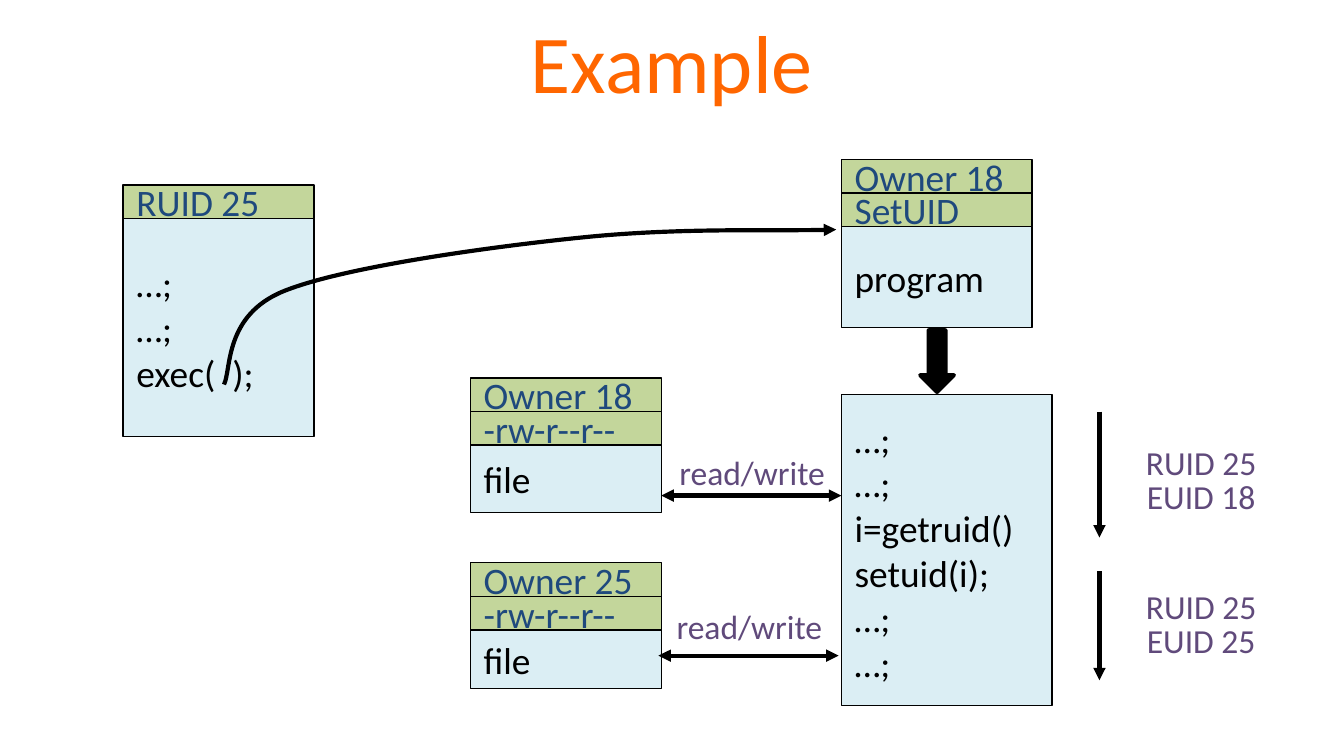
"""Build a slide that shows how setuid changes the user IDs of a process."""
from lxml.etree import SubElement
from pptx import Presentation
from pptx.dml.color import RGBColor
from pptx.enum.shapes import MSO_CONNECTOR as CONN, MSO_SHAPE as SHAPE
from pptx.enum.text import MSO_ANCHOR as ANCHOR, PP_ALIGN as ALIGN
from pptx.oxml.ns import qn
from pptx.util import Pt

BLACK = RGBColor(0x00, 0x00, 0x00)
ORANGE = RGBColor(0xFF, 0x66, 0x00)
NAVY = RGBColor(0x1F, 0x49, 0x7D)
PURPLE = RGBColor(0x60, 0x4A, 0x7B)
GREEN = RGBColor(0xC3, 0xD6, 0x9B)
BLUE = RGBColor(0xDB, 0xEE, 0xF4)


class Diagram:
    """Style of the diagram and the slide it is drawn on."""

    font = "Calibri"
    row = 18
    width = 102.25
    thin = 0.75
    thick = 2.25

    def __init__(self, slide):
        self.shapes = slide.shapes

    def set_text(self, sp, text, size, color, align, anchor, wrap=True):
        tf = sp.text_frame
        tf.text = text
        tf.word_wrap = wrap
        tf.vertical_anchor = anchor
        for p in tf.paragraphs:
            p.alignment = align
            for r in p.runs:
                r.font.name = self.font
                r.font.size = Pt(size)
                r.font.color.rgb = color

    def label(self, x, y, w, h, text, size=18, color=PURPLE, anchor=ANCHOR.TOP):
        sp = self.shapes.add_textbox(Pt(x), Pt(y), Pt(w), Pt(h))
        self.set_text(sp, text, size, color, ALIGN.CENTER, anchor, False)

    def block(self, kind, x, y, w, h, fill, weight):
        sp = self.shapes.add_shape(kind, Pt(x), Pt(y), Pt(w), Pt(h))
        sp.shadow.inherit = False
        sp.fill.solid()
        sp.fill.fore_color.rgb = fill
        sp.line.color.rgb = BLACK
        sp.line.width = Pt(weight)

        return sp

    def box(self, x, y, w, h, text, fill, color):
        sp = self.block(SHAPE.RECTANGLE, x, y, w, h, fill, self.thin)
        self.set_text(sp, text, 20, color, ALIGN.LEFT, ANCHOR.MIDDLE)

    def stack(self, x, y, headers, body, body_height):
        for header in headers:
            self.box(x, y, self.width, self.row, header, GREEN, NAVY)
            y += self.row
        self.box(x, y, self.width, body_height, body, BLUE, BLACK)

    def stroke(self, sp, *ends):
        sp.line.color.rgb = BLACK
        sp.line.width = Pt(self.thick)
        ln = sp._element.spPr.find(qn("a:ln"))
        for end in ends:
            SubElement(ln, qn(f"a:{end}"), type="triangle")

    def arrow(self, x1, y1, x2, y2, *ends):
        cxn = self.shapes.add_connector(CONN.STRAIGHT, Pt(x1), Pt(y1), Pt(x2), Pt(y2))
        self.stroke(cxn, *ends)
        SubElement(cxn._element.spPr, qn("a:effectLst"))

    def curve(self, start, controls):
        builder = self.shapes.build_freeform(*start, scale=Pt(1))
        builder.add_line_segments(controls, close=False)
        sp = builder.convert_to_shape()
        sp.shadow.inherit = False
        sp.fill.background()
        self.stroke(sp, "tailEnd")
        lines = list(sp._element.iter(qn("a:lnTo")))
        outline = lines[0].getparent()
        for i in range(0, len(lines), 3):
            bezier = SubElement(outline, qn("a:cubicBezTo"))
            for line in lines[i:i + 3]:
                bezier.append(line[0])
                outline.remove(line)


def main():
    prs = Presentation()
    prs.slide_width, prs.slide_height = Pt(720), Pt(405)
    s = prs.slides.add_slide(prs.slide_layouts[6])
    d = Diagram(s)

    d.label(36, -1.5, 648, 67.5, "Example", 44, ORANGE, ANCHOR.MIDDLE)

    d.stack(66, 99, ["RUID 25"], "…;\n…;\nexec(  );", 117)
    d.stack(450.75, 85.5, ["Owner 18", "SetUID"], "program", 54)
    d.stack(252, 202.5, ["Owner 18", "-rw-r--r--"], "file", 36)
    d.stack(252, 301.5, ["Owner 25", "-rw-r--r--"], "file", 31.5)
    d.box(450.75, 211.5, 113, 166.5,
          "…;\n…;\ni=getruid()\nsetuid(i);\n…;\n…;", BLUE, BLACK)

    d.curve((119.5, 206), [(124.5, 197.5), (119.5, 169), (152, 156),
                           (184.5, 143), (264, 132.5), (314, 127),
                           (364, 121.5), (420.5, 123.75), (448.5, 123)])
    d.block(SHAPE.DOWN_ARROW, 493, 177, 18, 33, BLACK, d.thick)

    for x, y, label_y in ((354.25, 265.5, 238.5), (352.75, 351.25, 321.25)):
        d.arrow(x, y, x + 96.5, y, "headEnd", "tailEnd")
        d.label(x + 2, label_y, 93.5, 29, "read/write")

    for top, bottom, label_y, euid in ((220.5, 288, 233.25, 18), (306, 364.5, 310.5, 25)):
        d.arrow(589, top, 589, bottom, "tailEnd")
        for i, text in enumerate(("RUID 25", f"EUID {euid}")):
            d.label(606.5, label_y + i * d.row, 74, 29, text)

    prs.save("out.pptx")


if __name__ == "__main__":
    main()
